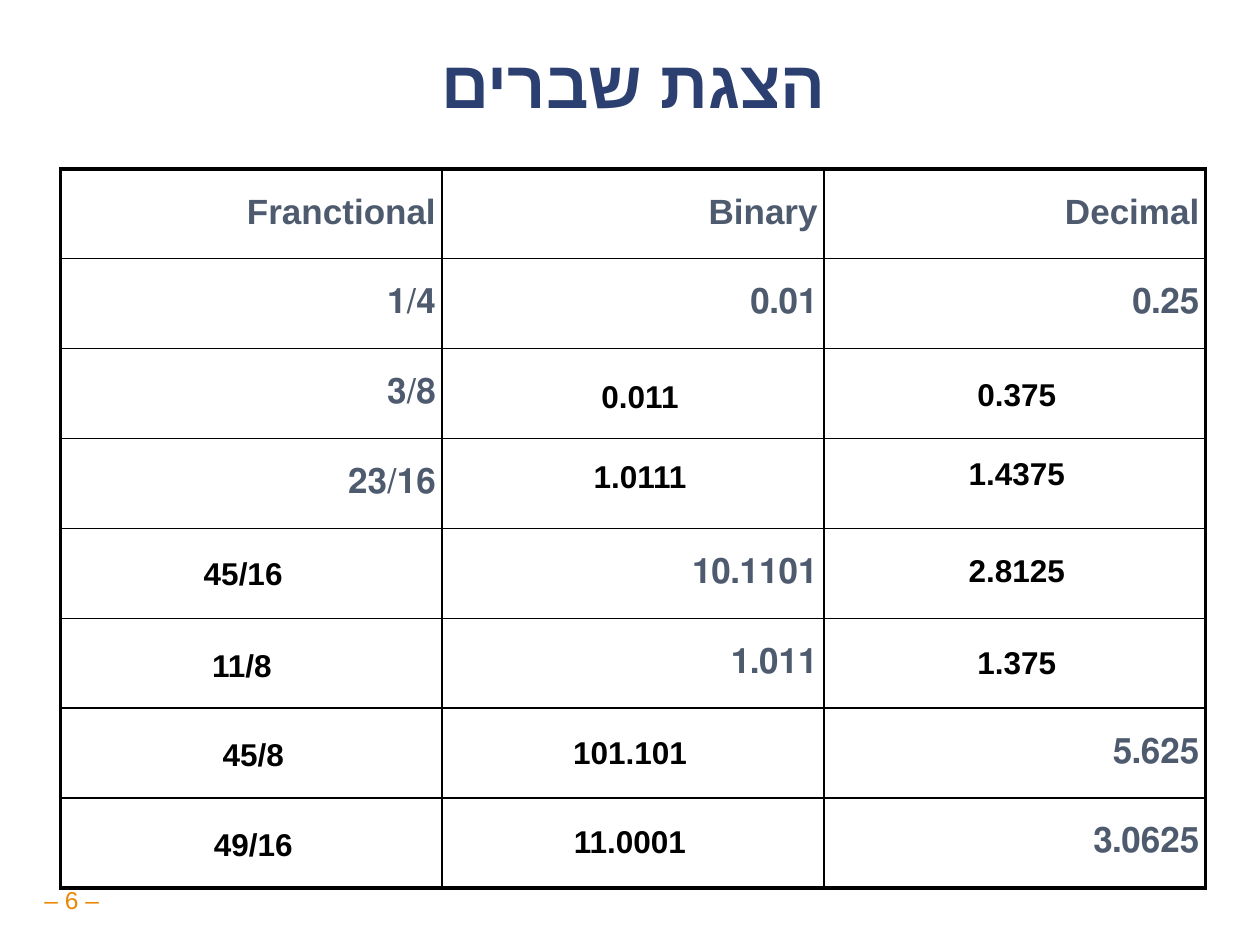
from lxml import etree
from pptx import Presentation
from pptx import util as u
from pptx.dml.color import RGBColor
from pptx.enum import text
from pptx.oxml.ns import qn

THEME = {
    "font": "Arial",
    "title": ("2C3F71", 38),
    "given": ("4E5B6F", 20),
    "answer": ("000000", 18),
    "page": ("EB8803", 14),
    "shadow": "808080",
    "border": "000000",
    "inner_line": 1,
    "outer_line": 2.25,
}

TITLE = "הצגת שברים"
PAGE = "– 6 –"
GIVEN = [
    ("Franctional", "Binary", "Decimal"),
    ("1/4", "0.01", "0.25"),
    ("3/8", "", ""),
    ("23/16", "", ""),
    ("", "10.1101", ""),
    ("", "1.011", ""),
    ("", "", "5.625"),
    ("", "", "3.0625"),
]
# Answers laid over the empty cells: wording, left, top
ANSWERS = [
    ("0.011", 4.53, 2.98), ("0.375", 7.52, 2.96),
    ("1.0111", 4.53, 3.61), ("1.4375", 7.52, 3.59),
    ("45/16", 1.38, 4.38), ("2.8125", 7.52, 4.36),
    ("11/8", 1.37, 5.11), ("1.375", 7.52, 5.09),
    ("45/8", 1.46, 5.82), ("101.101", 4.45, 5.8),
    ("49/16", 1.46, 6.53), ("11.0001", 4.45, 6.51),
]
TABLE = (0.48, 1.34, 9.09, 5.71)
ANSWER_SIZE = (1.1, 0.37)
INSET = 0.05


def set_margins(target, inset):
    target.margin_left = target.margin_right = u.Inches(inset)
    target.margin_top = target.margin_bottom = u.Inches(inset)


def write(frame, wording, role, align, spacing, bold=True, before=0, rtl=False):
    paragraph = frame.paragraphs[0]
    paragraph.alignment = align
    paragraph.line_spacing = spacing
    color, size = THEME[role]
    if before:
        paragraph.space_before = u.Pt(size * before)
    if rtl:
        paragraph._p.get_or_add_pPr().set("rtl", "1")
    run = paragraph.add_run()
    run.text = wording
    run.font.name = THEME["font"]
    run.font.size = u.Pt(size)
    run.font.bold = bold
    run.font.color.rgb = RGBColor.from_string(color)
    return run


def add_text(slide, box, wording, role, spacing, inset=INSET, wrap=True,
             anchor=text.MSO_ANCHOR.TOP, grow=True, **style):
    frame = slide.shapes.add_textbox(*map(u.Inches, box)).text_frame
    frame.word_wrap = wrap
    frame.vertical_anchor = anchor
    if grow:
        frame.auto_size = text.MSO_AUTO_SIZE.SHAPE_TO_FIT_TEXT
    set_margins(frame, inset)
    return write(frame, wording, role, text.PP_ALIGN.CENTER, spacing, **style)


def add_solid_fill(parent, color):
    fill = etree.SubElement(parent, qn("a:solidFill"))
    etree.SubElement(fill, qn("a:srgbClr"), val=color)


def add_text_shadow(run):
    effects = etree.Element(qn("a:effectLst"))
    shadow = etree.SubElement(effects, qn("a:outerShdw"),
                              dist="38100", dir="2700000")
    etree.SubElement(shadow, qn("a:srgbClr"), val=THEME["shadow"])
    run.font._element.find(qn("a:solidFill")).addnext(effects)


def set_borders(cell, outer_sides):
    props = cell._tc.get_or_add_tcPr()
    for place, side in enumerate("LRTB"):
        width = THEME["outer_line" if side in outer_sides else "inner_line"]
        line = etree.Element(qn(f"a:ln{side}"), w=str(u.Pt(width)))
        add_solid_fill(line, THEME["border"])
        props.insert(place, line)


def add_fraction_table(slide):
    rows, columns = len(GIVEN), len(GIVEN[0])
    table = slide.shapes.add_table(rows, columns, *map(u.Inches, TABLE)).table
    table.first_row = table.horz_banding = False
    for row in table.rows:
        row.height = u.Inches(TABLE[3] / rows)
    for r, values in enumerate(GIVEN):
        for c, value in enumerate(values):
            cell = table.cell(r, c)
            cell.fill.background()
            cell.vertical_anchor = text.MSO_ANCHOR.MIDDLE
            set_margins(cell, INSET)
            edges = {"L": c == 0, "R": c == columns - 1,
                     "T": r == 0, "B": r == rows - 1}
            set_borders(cell, [side for side, outer in edges.items() if outer])
            if value:
                write(cell.text_frame, value, "given", text.PP_ALIGN.RIGHT,
                      0.95, before=0.5, rtl=True)


def main():
    deck = Presentation()
    deck.slide_width, deck.slide_height = u.Inches(10), u.Inches(7.5)
    slide = deck.slides.add_slide(deck.slide_layouts[6])
    middle = text.MSO_ANCHOR.MIDDLE

    add_text(slide, (0.24, 7, 0.66, 0.31), PAGE, "page", 0.9,
             wrap=False, anchor=middle, bold=False)
    title = add_text(slide, (0.35, 0.27, 9.36, 0.85), TITLE, "title", 0.87,
                     inset=0, anchor=middle, grow=False, rtl=True)
    add_text_shadow(title)
    etree.SubElement(title.font._element, qn("a:cs"), typeface=THEME["font"])

    add_fraction_table(slide)
    for wording, left, top in ANSWERS:
        add_text(slide, (left, top, *ANSWER_SIZE), wording, "answer", 0.9,
                 before=0.5)

    deck.save("out.pptx")


if __name__ == "__main__":
    main()
